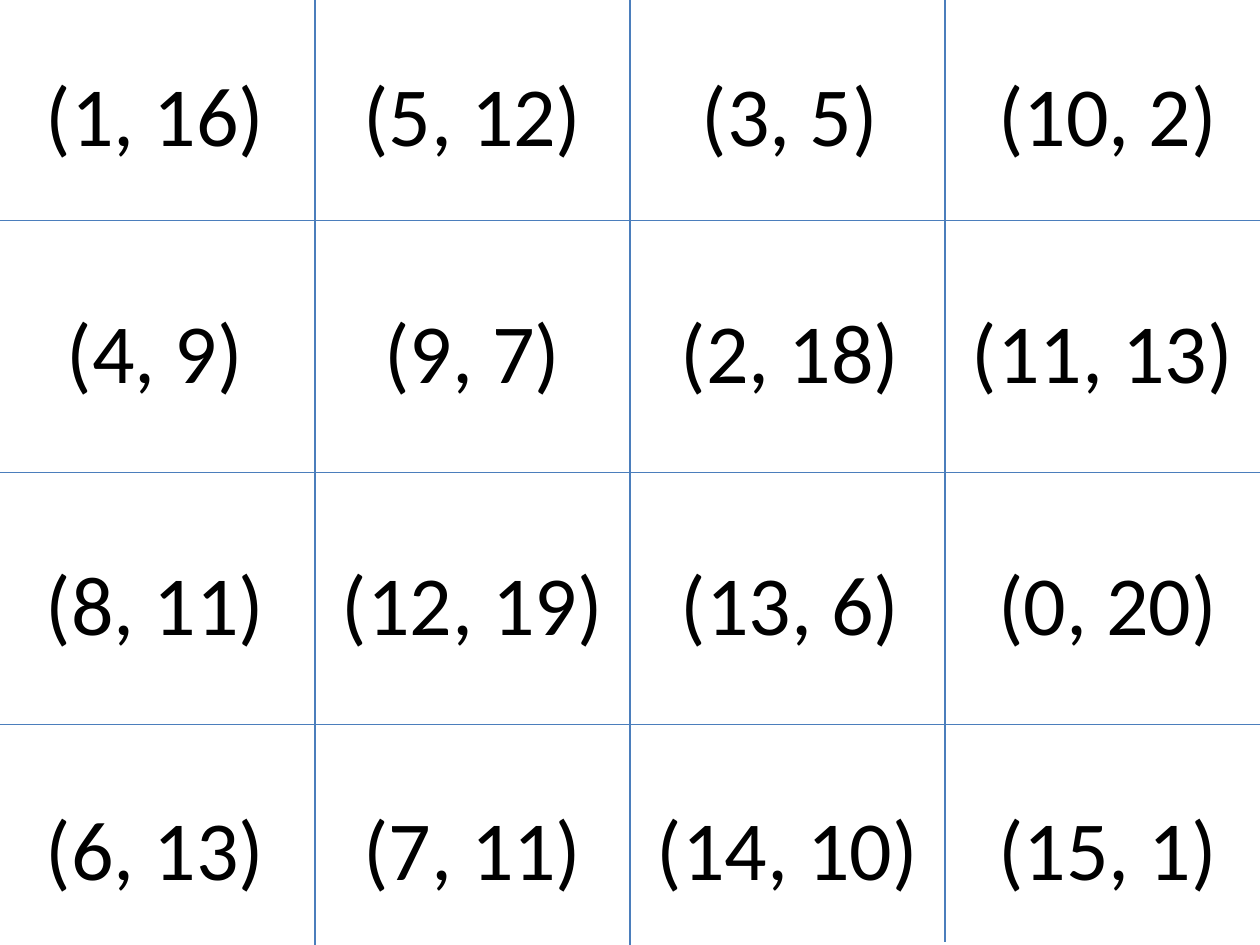
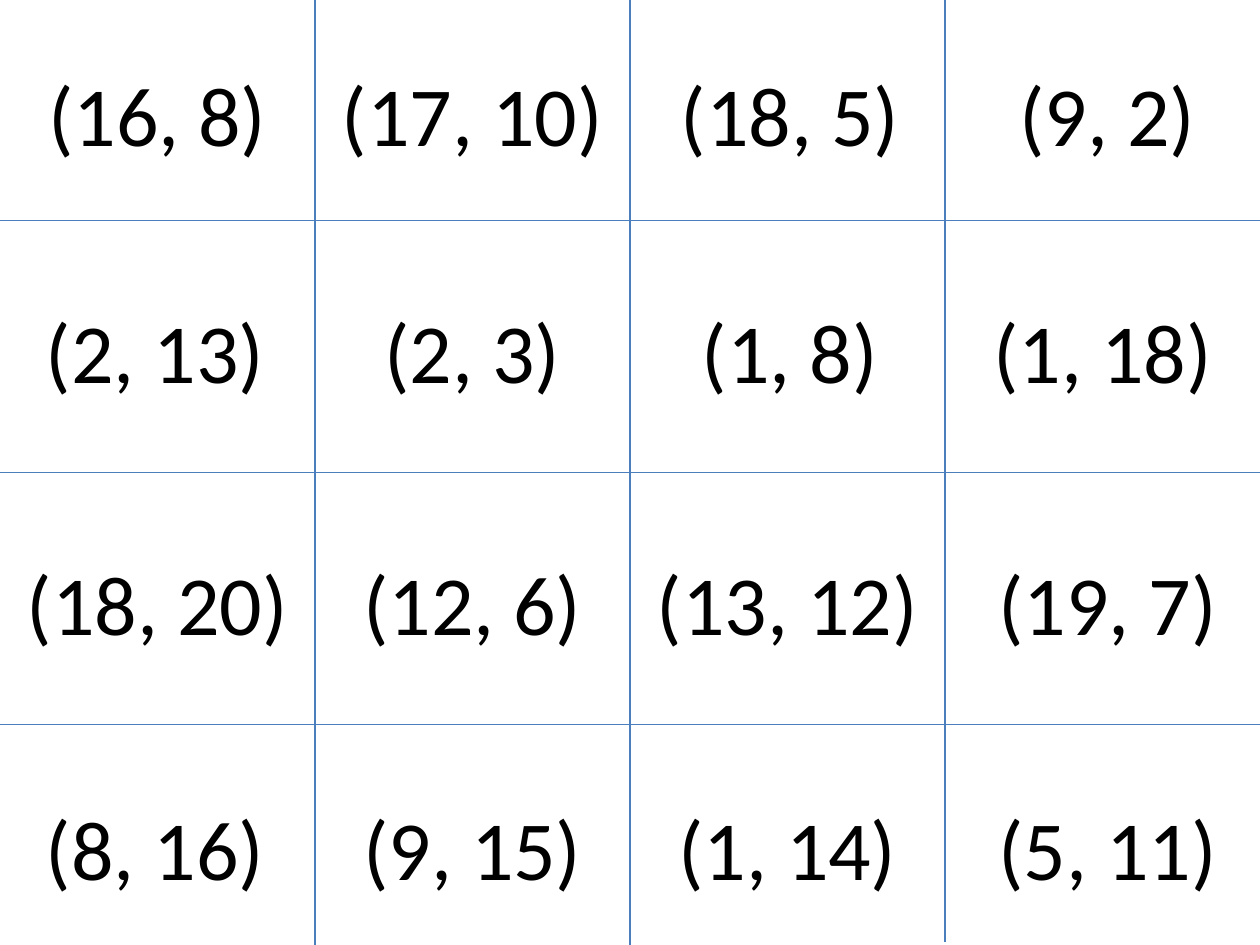
from lxml import etree
from pptx import Presentation
from pptx.dml.color import RGBColor
from pptx.enum.shapes import MSO_CONNECTOR as CONNECTOR
from pptx.enum.text import MSO_AUTO_SIZE as AUTO_SIZE, PP_ALIGN as ALIGN
from pptx.oxml.ns import qn
from pptx.util import Inches, Pt

SLIDE_W, SLIDE_H = 10, 7.5
COLUMN_W = SLIDE_W / 4
ROW_LINES = (1.75, 3.75, 5.75)
# Left-to-right lines and the vertical shift of each
COLUMN_LINES = ((COLUMN_W, 0), (2 * COLUMN_W, 0), (3 * COLUMN_W, -0.02))

TEXT_TOPS = (0.45, 2.33, 4.33, 6.27)
TEXT_LEFT, TEXT_STEP = 0.19, 2.52
TEXT_W, TEXT_H = 2.08, 0.91

FONT, FONT_SIZE = "Calibri", 48
TEXT_COLOR, LINE_COLOR = "000000", "4B7EBC"

# Widths of the boxes that are wider than TEXT_W, by (row, column)
WIDE_BOXES = {(1, 3): 2.35, (2, 1): 2.33, (3, 2): 2.33}

CARD_SHEETS = (
    ((((1, 16), (5, 12), (3, 5), (10, 2)),
      ((4, 9), (9, 7), (2, 18), (11, 13)),
      ((8, 11), (12, 19), (13, 6), (0, 20)),
      ((6, 13), (7, 11), (14, 10), (15, 1))),
     WIDE_BOXES),
    ((((16, 8), (17, 10), (18, 5), (9, 2)),
      ((2, 13), (2, 3), (1, 8), (1, 18)),
      ((18, 20), (12, 6), (13, 12), (19, 7)),
      ((8, 16), (9, 15), (1, 14), (5, 11))),
     {**WIDE_BOXES, (0, 0): 2.5, (0, 1): 2.5, (2, 0): 2.5, (2, 2): 2.5}),
)


def rgb(color):
    return RGBColor.from_string(color)


def add_line(slide, x1, y1, x2, y2):
    line = slide.shapes.add_connector(
        CONNECTOR.STRAIGHT, Inches(x1), Inches(y1), Inches(x2), Inches(y2))
    line.line.color.rgb = rgb(LINE_COLOR)
    line.line.width = Pt(0.75)
    etree.SubElement(line._element.spPr, qn("a:effectLst"))


def add_cutting_lines(slide):
    for x, shift in COLUMN_LINES:
        add_line(slide, x, shift, x, SLIDE_H + shift)
    for y in ROW_LINES:
        add_line(slide, 0, y, SLIDE_W, y)


def add_pair(slide, pair, left, top, width):
    box = slide.shapes.add_textbox(
        Inches(left), Inches(top), Inches(width), Inches(TEXT_H))
    tf = box.text_frame
    tf.word_wrap = True
    tf.auto_size = AUTO_SIZE.SHAPE_TO_FIT_TEXT
    p = tf.paragraphs[0]
    p.alignment = ALIGN.CENTER
    r = p.add_run()
    r.text = f"({pair[0]}, {pair[1]})"
    r.font.name = FONT
    r.font.size = Pt(FONT_SIZE)
    r.font.color.rgb = rgb(TEXT_COLOR)


def add_card_sheet(prs, pairs, wide_boxes):
    """Add a slide of 16 cards; wide boxes are centred in their column."""
    slide = prs.slides.add_slide(prs.slide_layouts[6])
    add_cutting_lines(slide)
    for row, (top, row_pairs) in enumerate(zip(TEXT_TOPS, pairs)):
        for column, pair in enumerate(row_pairs):
            width = wide_boxes.get((row, column), TEXT_W)
            if width > TEXT_W:
                left = column * COLUMN_W + (COLUMN_W - width) / 2
            else:
                left = TEXT_LEFT + column * TEXT_STEP
            add_pair(slide, pair, left, top, width)


def main():
    prs = Presentation()
    prs.slide_width, prs.slide_height = Inches(SLIDE_W), Inches(SLIDE_H)
    for pairs, wide_boxes in CARD_SHEETS:
        add_card_sheet(prs, pairs, wide_boxes)
    prs.save("out.pptx")


if __name__ == "__main__":
    main()
